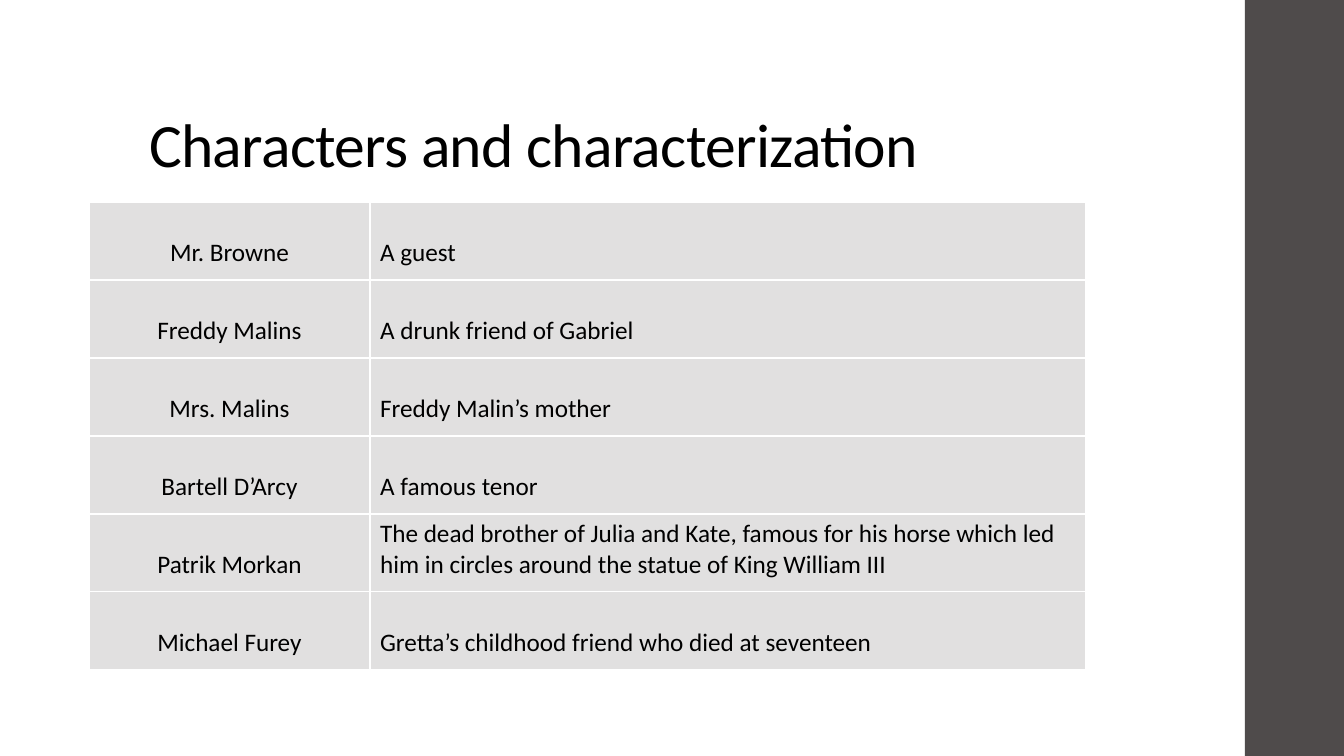
from lxml.etree import SubElement
from pptx import Presentation
from pptx.dml.color import RGBColor
from pptx.enum.shapes import MSO_SHAPE
from pptx.enum.text import MSO_ANCHOR, PP_ALIGN
from pptx.oxml.ns import qn
from pptx.util import Emu, Inches, Pt

PX = Inches(1) / 100.8
COLORS = {"text": "000000", "bar": "4F4B4B", "cell": "E1E0E0", "border": "FFFFFF"}
FONT = "Calibri"
CHARACTERS = [
    ("Mr. Browne", "A guest"),
    ("Freddy Malins", "A drunk friend of Gabriel"),
    ("Mrs. Malins", "Freddy Malin’s mother"),
    ("Bartell D’Arcy", "A famous tenor"),
    ("Patrik Morkan", "The dead brother of Julia and Kate, famous for his horse "
                      "which led him in circles around the statue of King William III"),
    ("Michael Furey", "Gretta’s childhood friend who died at seventeen"),
]
LONG_TEXT = 60  # descriptions longer than this wrap and are single-spaced


def px(length):
    return Emu(round(length * PX))


def color(name):
    return RGBColor.from_string(COLORS[name])


class SlideBuilder:
    def __init__(self, slide):
        self.slide = slide

    def format_paragraph(self, paragraph, size, spacing, align=PP_ALIGN.LEFT):
        paragraph.alignment = align
        paragraph.line_spacing = spacing
        for run in paragraph.runs:
            run.font.name = FONT
            run.font.size = Pt(size)
            run.font.bold = False
            run.font.color.rgb = color("text")

    def bar(self, left, top, width, height):
        shape = self.slide.shapes.add_shape(
            MSO_SHAPE.RECTANGLE, px(left), px(top), px(width), px(height))
        shape.shadow.inherit = False
        shape.fill.solid()
        shape.fill.fore_color.rgb = color("bar")
        shape.line.fill.background()

    def title(self, text, left, top, width, height):
        title = self.slide.shapes.title
        title.left, title.top = px(left), px(top)
        title.width, title.height = px(width), px(height)
        title.text_frame.text = text
        title.text_frame.vertical_anchor = MSO_ANCHOR.BOTTOM
        paragraph = title.text_frame.paragraphs[0]
        self.format_paragraph(paragraph, 44, 0.9)
        paragraph.runs[0]._r.get_or_add_rPr().set("spc", "-50")

    def border(self, cell):
        properties = cell._tc.get_or_add_tcPr()
        for side in ("a:lnL", "a:lnR", "a:lnT", "a:lnB"):
            line = SubElement(properties, qn(side), w=str(Pt(1)))
            fill = SubElement(line, qn("a:solidFill"))
            SubElement(fill, qn("a:srgbClr"), val=COLORS["border"])

    def cell(self, cell, text, spacing, align):
        cell.text_frame.text = text
        self.format_paragraph(cell.text_frame.paragraphs[0], 18, spacing, align)
        self.border(cell)
        cell.fill.solid()
        cell.fill.fore_color.rgb = color("cell")

    def table(self, rows, left, top, column_widths, row_height):
        table = self.slide.shapes.add_table(
            len(rows), len(column_widths), px(left), px(top),
            px(sum(column_widths)), px(row_height * len(rows))).table
        table.first_row = table.horz_banding = False
        for column, width in zip(table.columns, column_widths):
            column.width = px(width)
        for row, (name, description) in zip(table.rows, rows):
            row.height = px(row_height)
            spacing = 1 if len(description) > LONG_TEXT else 2
            self.cell(row.cells[0], name, 2, PP_ALIGN.CENTER)
            self.cell(row.cells[1], description, spacing, PP_ALIGN.LEFT)


def main():
    presentation = Presentation()
    presentation.slide_width, presentation.slide_height = px(1344), px(756)
    builder = SlideBuilder(presentation.slides.add_slide(presentation.slide_layouts[5]))
    builder.bar(1245, 0, 99, 756)
    builder.title("Characters and characterization", 139, 40, 1068, 146)
    builder.table(CHARACTERS, 89, 202, (281, 716), 78)
    presentation.save("out.pptx")


if __name__ == "__main__":
    main()
